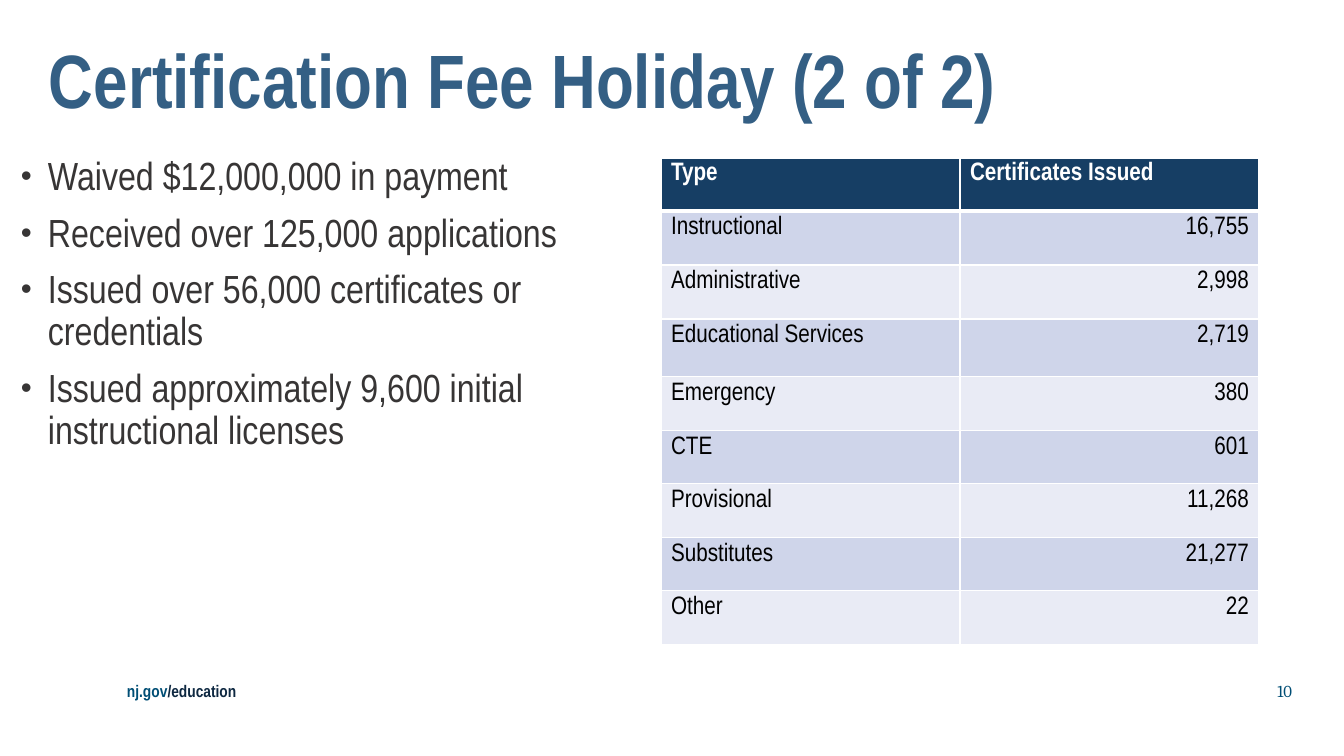
from lxml.etree import SubElement
from pptx import Presentation
from pptx.dml.color import RGBColor
from pptx.enum.text import MSO_ANCHOR, PP_ALIGN
from pptx.oxml.ns import qn
from pptx.util import Pt

PX = 914400 / 100.8

NAVY = RGBColor(0x0E, 0x28, 0x41)
TEAL = RGBColor(0x00, 0x4E, 0x75)
TITLE_BLUE = RGBColor(0x34, 0x5F, 0x84)
CHARCOAL = RGBColor(0x37, 0x35, 0x35)
HEADER_BLUE = RGBColor(0x16, 0x3E, 0x64)
BAND_DARK = RGBColor(0xCF, 0xD5, 0xEA)
BAND_LIGHT = RGBColor(0xE9, 0xEB, 0xF5)
WHITE = RGBColor(0xFF, 0xFF, 0xFF)
BLACK = RGBColor(0x00, 0x00, 0x00)

HIGHLIGHTS = [
    "Waived $12,000,000 in payment",
    "Received over 125,000 applications",
    "Issued over 56,000 certificates or credentials",
    "Issued approximately 9,600 initial instructional licenses",
]
CERTIFICATES = [
    ("Type", "Certificates Issued"),
    ("Instructional", "16,755"),
    ("Administrative", "2,998"),
    ("Educational Services", "2,719"),
    ("Emergency", "380"),
    ("CTE", "601"),
    ("Provisional", "11,268"),
    ("Substitutes", "21,277"),
    ("Other", "22"),
]
ROW_HEIGHTS = [54, 54, 54, 58, 54, 53, 54, 53, 54]


def px(length):
    return round(length * PX)


def write(paragraph, text, *, size, color, font="Arial Narrow", bold=False,
          align=PP_ALIGN.LEFT, line_spacing=1.0, space_before=0):
    """Append a formatted run to a paragraph."""
    paragraph.alignment = align
    paragraph.line_spacing = line_spacing
    paragraph.space_before = Pt(space_before)
    run = paragraph.add_run()
    run.text = text
    run.font.name = font
    run.font.size = Pt(size)
    run.font.bold = bold
    run.font.color.rgb = color


def add_text_area(slide, left, top, width, height, anchor=MSO_ANCHOR.TOP):
    area = slide.shapes.add_textbox(px(left), px(top), px(width), px(height))
    frame = area.text_frame
    frame.word_wrap = True
    frame.vertical_anchor = anchor
    frame.margin_left = frame.margin_right = 0
    frame.margin_top = frame.margin_bottom = 0
    return frame


def set_bullet(paragraph, indent):
    properties = paragraph._p.get_or_add_pPr()
    properties.set("marL", str(px(indent)))
    properties.set("indent", str(-px(indent)))
    SubElement(properties, qn("a:buSzPct"), val="80000")
    SubElement(properties, qn("a:buFont"), typeface="Arial")
    SubElement(properties, qn("a:buChar"), char="•")


def add_bullets(frame, items):
    for index, item in enumerate(items):
        paragraph = frame.add_paragraph() if index else frame.paragraphs[0]
        set_bullet(paragraph, 27)
        write(paragraph, item, size=28, color=CHARCOAL, line_spacing=0.9,
              space_before=10 if index else 0)


def set_borders(cell, **widths):
    """Draw white borders; borders must come before the fill in the XML."""
    properties = cell._tc.get_or_add_tcPr()
    for position, side in enumerate("LRTB"):
        line = properties.makeelement(qn(f"a:ln{side}"),
                                      {"w": str(Pt(widths.get(side, 1)))})
        fill = SubElement(line, qn("a:solidFill"))
        SubElement(fill, qn("a:srgbClr"), val=str(WHITE))
        properties.insert(position, line)


def fill_cell(cell, text, row, column):
    header = row == 0
    cell.fill.solid()
    band = BAND_DARK if row % 2 else BAND_LIGHT
    cell.fill.fore_color.rgb = HEADER_BLUE if header else band
    set_borders(cell, T=3 if row < 2 else 1, B=3 if header else 1)
    write(cell.text_frame.paragraphs[0], text, size=18, bold=header,
          color=WHITE if header else BLACK,
          align=PP_ALIGN.RIGHT if column and not header else PP_ALIGN.LEFT)


def add_certificate_table(slide, left, top, column_width):
    table = slide.shapes.add_table(
        len(CERTIFICATES), 2, px(left), px(top),
        px(2 * column_width), px(sum(ROW_HEIGHTS))).table
    for column in table.columns:
        column.width = px(column_width)
    for row, (values, height) in enumerate(zip(CERTIFICATES, ROW_HEIGHTS)):
        table.rows[row].height = px(height)
        for column, value in enumerate(values):
            fill_cell(table.cell(row, column), value, row, column)


def add_footer(slide):
    address = add_text_area(slide, 127, 681, 567, 20, MSO_ANCHOR.MIDDLE).paragraphs[0]
    write(address, "nj.gov", size=12, color=TEAL, bold=True)
    write(address, "/education", size=12, color=NAVY, bold=True)
    page = add_text_area(slide, 725, 681, 567, 20, MSO_ANCHOR.MIDDLE).paragraphs[0]
    write(page, "10", size=12, color=TEAL, font="Cambria", align=PP_ALIGN.RIGHT)


def main():
    deck = Presentation()
    deck.slide_width, deck.slide_height = px(1344), px(756)
    slide = deck.slides.add_slide(deck.slide_layouts[6])

    # Address and page number
    add_footer(slide)

    # Title
    title = add_text_area(slide, 49, 43, 1243, 46)
    write(title.paragraphs[0], "Certification Fee Holiday (2 of 2)",
          size=54, color=TITLE_BLUE, bold=True, line_spacing=0.9)

    # Highlights on the left, certificate counts on the right
    add_bullets(add_text_area(slide, 21, 157, 596, 438), HIGHLIGHTS)
    add_certificate_table(slide, 661, 157, 299)

    deck.save("out.pptx")


if __name__ == "__main__":
    main()
